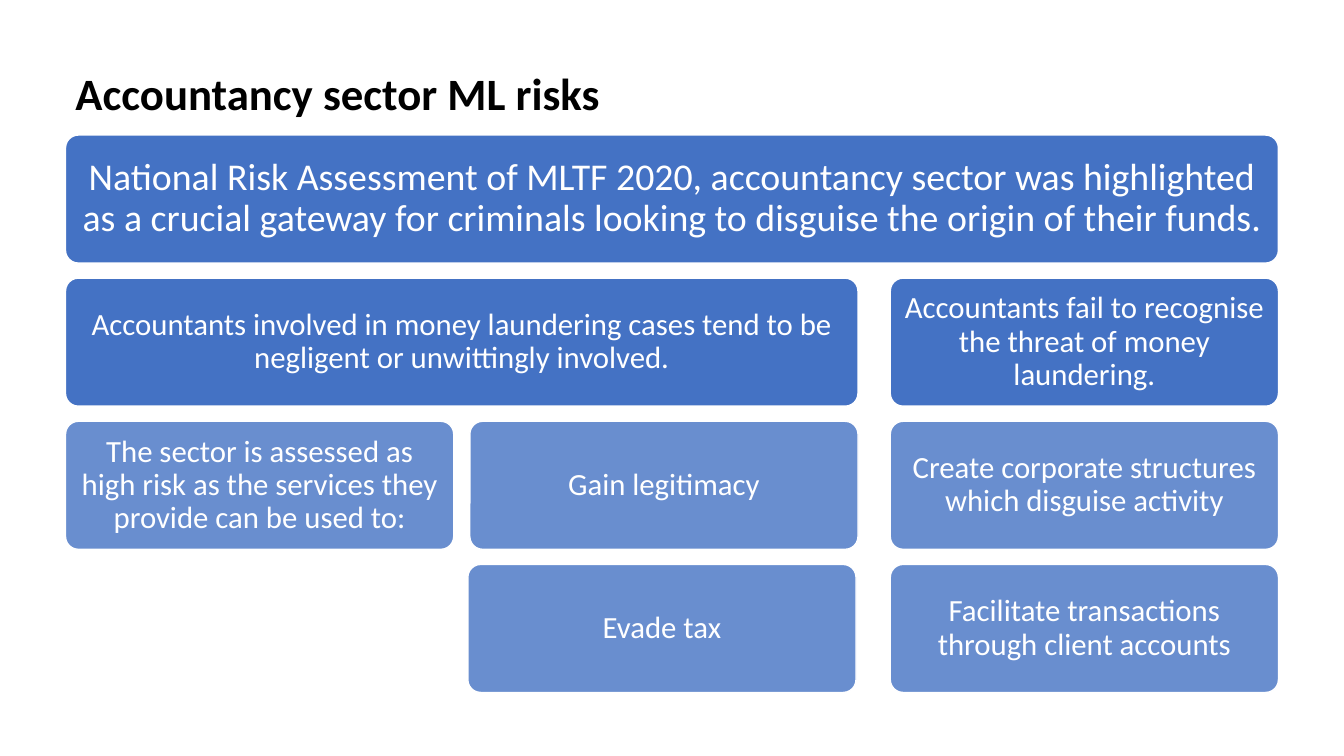
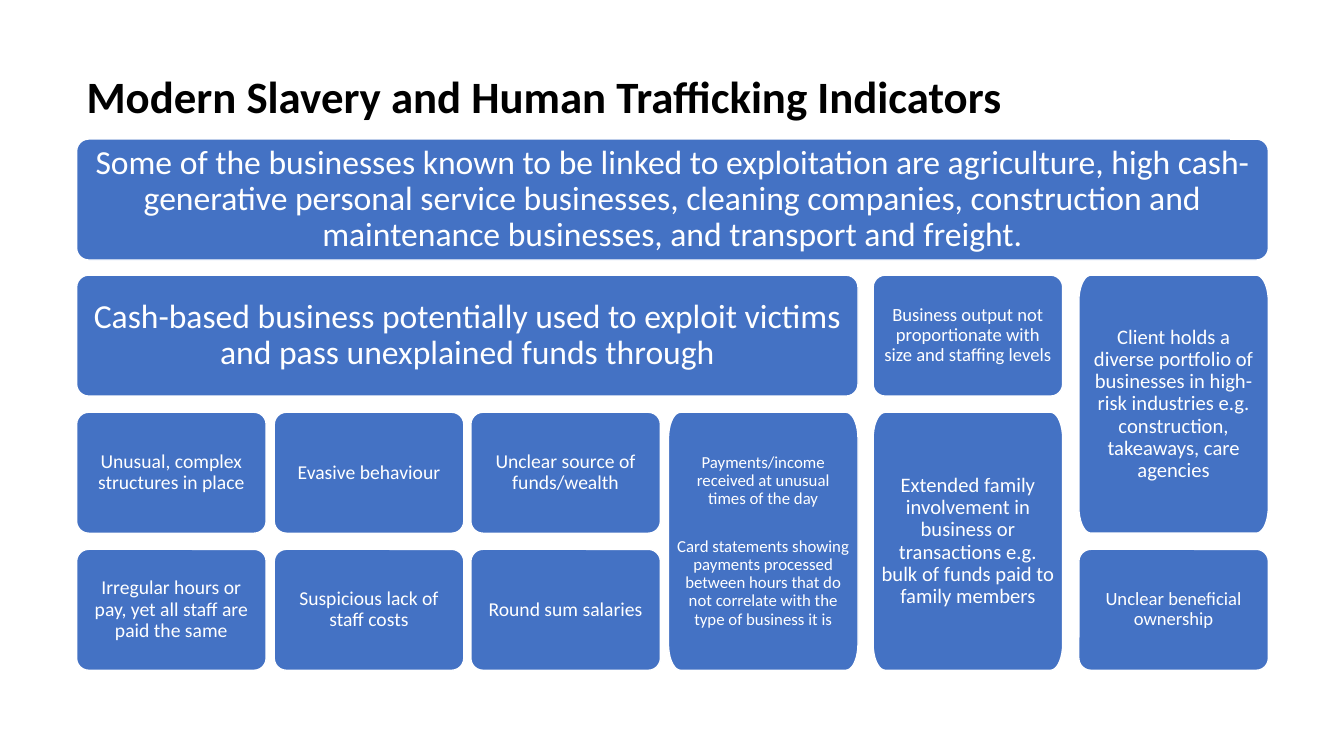
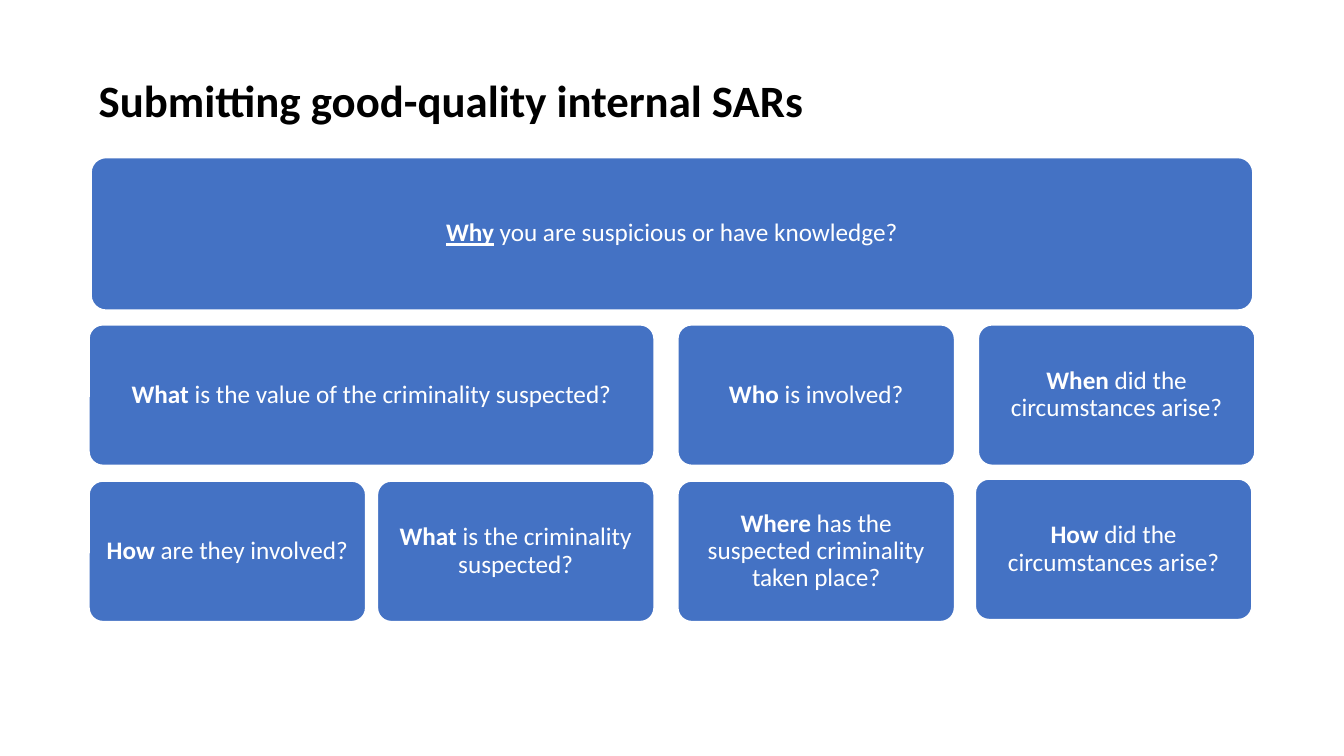
import math
from dataclasses import dataclass

from lxml import etree
from pptx import Presentation
from pptx.dml.color import RGBColor
from pptx.enum.shapes import MSO_SHAPE
from pptx.enum.text import MSO_ANCHOR, PP_ALIGN
from pptx.oxml.ns import qn
from pptx.util import Inches, Pt

# Shared style
BLUE = RGBColor(0x44, 0x72, 0xC4)
WHITE = RGBColor(0xFF, 0xFF, 0xFF)
BLACK = RGBColor(0x00, 0x00, 0x00)
FONT = "Calibri"
ROUND_RECT = MSO_SHAPE.ROUNDED_RECTANGLE
MIDDLE = MSO_ANCHOR.MIDDLE
CENTER = PP_ALIGN.CENTER
LEFT = PP_ALIGN.LEFT
LINE_SPACING = 0.9
CORNER = 0.1
TITLE_SIZE = 32
TITLE_WIDTH, TITLE_HEIGHT = 10.61, 0.64


@dataclass
class Grid:
    """Column and row starts with one cell size, in inches."""
    columns: list
    rows: list
    width: float
    height: float

    def area(self, column, row, across=1, down=1):
        left, top = self.columns[column], self.rows[row]
        right = self.columns[column + across - 1] + self.width
        bottom = self.rows[row + down - 1] + self.height
        return left, top, right - left, bottom - top


def shifted(area, dx, dy=0):
    left, top, width, height = area
    return left + dx, top + dy, width, height


def style_paragraph(para, size, color, align):
    para.alignment = align
    para.line_spacing = LINE_SPACING
    para.font.name = FONT
    para.font.size = Pt(size)
    para.font.color.rgb = color


def add_title(page, left, top, text):
    box = page.shapes.add_textbox(
        *map(Inches, (left, top, TITLE_WIDTH, TITLE_HEIGHT)))
    frame = box.text_frame
    frame.word_wrap = True
    frame.vertical_anchor = MIDDLE
    para = frame.paragraphs[0]
    para.text = text
    style_paragraph(para, TITLE_SIZE, BLACK, LEFT)
    para.font.bold = True


def style_tile(tile, line_width, inset):
    tile.shadow.inherit = False
    tile.fill.solid()
    tile.fill.fore_color.rgb = BLUE
    tile.line.color.rgb = WHITE
    tile.line.width = Pt(line_width)
    frame = tile.text_frame
    frame.word_wrap = True
    frame.vertical_anchor = MIDDLE
    frame.margin_left = frame.margin_right = Inches(inset)
    frame.margin_top = frame.margin_bottom = Inches(inset)


def set_opacity(tile, percent):
    color = tile.element.spPr.find(qn("a:solidFill")).find(qn("a:srgbClr"))
    etree.SubElement(color, qn("a:alpha")).set("val", str(percent * 1000))


def add_tile(page, area, text, size, inset, lead="", underline=False,
             line_width=1, opacity=100):
    """Rounded tile; a lead word is set in bold before the text."""
    tile = page.shapes.add_shape(ROUND_RECT, *map(Inches, area))
    tile.adjustments[0] = CORNER
    style_tile(tile, line_width, inset)
    if opacity < 100:
        set_opacity(tile, opacity)
    para = tile.text_frame.paragraphs[0]
    style_paragraph(para, size, WHITE, CENTER)
    if lead:
        span = para.add_run()
        span.text = lead
        span.font.bold = True
        if underline:
            span.font.underline = True
    para.add_run().text = text


def add_tall_tile(page, area, texts, size, gap=0):
    """Tile with elliptical corners; gap (points) parts its paragraphs."""
    left, top, width, height = area
    radius_x, radius_y = 0.12, 0.26
    right, bottom = left + width, top + height
    centers = [
        (right - radius_x, bottom - radius_y), (left + radius_x, bottom - radius_y),
        (left + radius_x, top + radius_y), (right - radius_x, top + radius_y),
    ]
    points = []
    for corner, (x, y) in enumerate(centers):
        for step in range(0, 91, 10):
            angle = math.radians(corner * 90 + step)
            points.append((Inches(x + radius_x * math.cos(angle)),
                           Inches(y + radius_y * math.sin(angle))))
    builder = page.shapes.build_freeform(*points[0])
    builder.add_line_segments(points[1:], close=True)
    tile = builder.convert_to_shape()
    style_tile(tile, line_width=1, inset=0.08)
    frame = tile.text_frame
    for index, text in enumerate(texts):
        para = frame.add_paragraph() if index else frame.paragraphs[0]
        para.text = text
        style_paragraph(para, size, WHITE, CENTER)
        if index < len(texts) - 1:
            para.space_after = Pt(gap)


def build_risks(page):
    add_title(page, 0.65, 0.63, "Accountancy sector ML risks")
    grid = Grid([0.65, 4.66, 8.83], [1.34, 2.76, 4.18, 5.6], 3.85, 1.27)
    add_tile(page, grid.area(0, 0, across=3),
             "National Risk Assessment of MLTF 2020, accountancy sector was "
             "highlighted as a crucial gateway for criminals looking to "
             "disguise the origin of their funds.", 27, 0.11)
    tiles = [
        (grid.area(0, 1, across=2), 100,
         "Accountants involved in money laundering cases tend to be "
         "negligent or unwittingly involved."),
        (grid.area(2, 1), 100,
         "Accountants fail to recognise the threat of money laundering."),
        (grid.area(0, 2), 80,
         "The sector is assessed as high risk as the services they provide "
         "can be used to:"),
        (grid.area(1, 2), 80, "Gain legitimacy"),
        (grid.area(2, 2), 80,
         "Create corporate structures which disguise activity"),
        (shifted(grid.area(1, 3), -0.02), 80, "Evade tax"),
        (grid.area(2, 3), 80, "Facilitate transactions through client accounts"),
    ]
    for area, opacity, text in tiles:
        add_tile(page, area, text, 22, 0.09, opacity=opacity)


def build_indicators(page):
    add_title(page, 0.76, 0.66, "Modern Slavery and Human Trafficking Indicators")
    grid = Grid([0.76, 2.72, 4.67, 6.63, 8.66, 10.7],
                [1.38, 2.73, 4.09, 5.45], 1.88, 1.2)
    # Heading tiles
    add_tile(page, grid.area(0, 0, across=6),
             "Some of the businesses known to be linked to exploitation are "
             "agriculture, high cash-generative personal service businesses, "
             "cleaning companies, construction and maintenance businesses, "
             "and transport and freight.", 24, 0.09)
    add_tile(page, grid.area(0, 1, across=4),
             "Cash-based business potentially used to exploit victims and "
             "pass unexplained funds through", 24, 0.05)
    # Single indicators
    tiles = [
        (0, 2, 14, "Unusual, complex structures in place"),
        (1, 2, 14, "Evasive behaviour"),
        (2, 2, 14, "Unclear source of funds/wealth"),
        (0, 3, 14, "Irregular hours or pay, yet all staff are paid the same"),
        (1, 3, 14, "Suspicious lack of staff costs"),
        (2, 3, 14, "Round sum salaries"),
        (4, 1, 13.3,
         "Business output not proportionate with size and staffing levels"),
        (5, 3, 13.3, "Unclear beneficial ownership"),
    ]
    for column, row, size, text in tiles:
        add_tile(page, grid.area(column, row), text, size, 0.05)
    # Indicators two rows high
    add_tall_tile(page, grid.area(3, 2, down=2), [
        "Payments/income received at unusual times of the day",
        "Card statements showing payments processed between hours that do "
        "not correlate with the type of business it is"], 12, gap=21.3)
    add_tall_tile(page, grid.area(4, 2, down=2), [
        "Extended family involvement in business or transactions e.g. bulk "
        "of funds paid to family members"], 14.7)
    add_tall_tile(page, grid.area(5, 1, down=2), [
        "Client holds a diverse portfolio of businesses in high-risk "
        "industries e.g. construction, takeaways, care agencies"], 14.7)


def build_reports(page):
    add_title(page, 0.88, 0.7, "Submitting good-quality internal SARs")
    grid = Grid([0.88, 3.74, 6.72, 9.7], [3.22, 4.77], 2.75, 1.4)
    tiles = [
        ((0.9, 1.56, 11.53, 1.52), "Why",
         " you are suspicious or have knowledge?"),
        (grid.area(0, 0, across=2), "What",
         " is the value of the criminality suspected?"),
        (grid.area(2, 0), "Who", " is involved?"),
        (grid.area(3, 0), "When", " did the circumstances arise?"),
        (grid.area(0, 1), "How", " are they involved?"),
        (grid.area(1, 1), "What", " is the criminality suspected?"),
        (grid.area(2, 1), "Where", " has the suspected criminality taken place?"),
        (shifted(grid.area(3, 1), -0.03, -0.02), "How",
         " did the circumstances arise?"),
    ]
    for area, lead, text in tiles:
        add_tile(page, area, text, 18, 0.07, lead=lead,
                 underline=lead == "Why", line_width=1.5)


def main():
    deck = Presentation()
    deck.slide_width = Inches(13.33)
    deck.slide_height = Inches(7.5)
    blank = deck.slide_layouts[6]
    for build in (build_risks, build_indicators, build_reports):
        build(deck.slides.add_slide(blank))
    deck.save("out.pptx")


if __name__ == "__main__":
    main()
